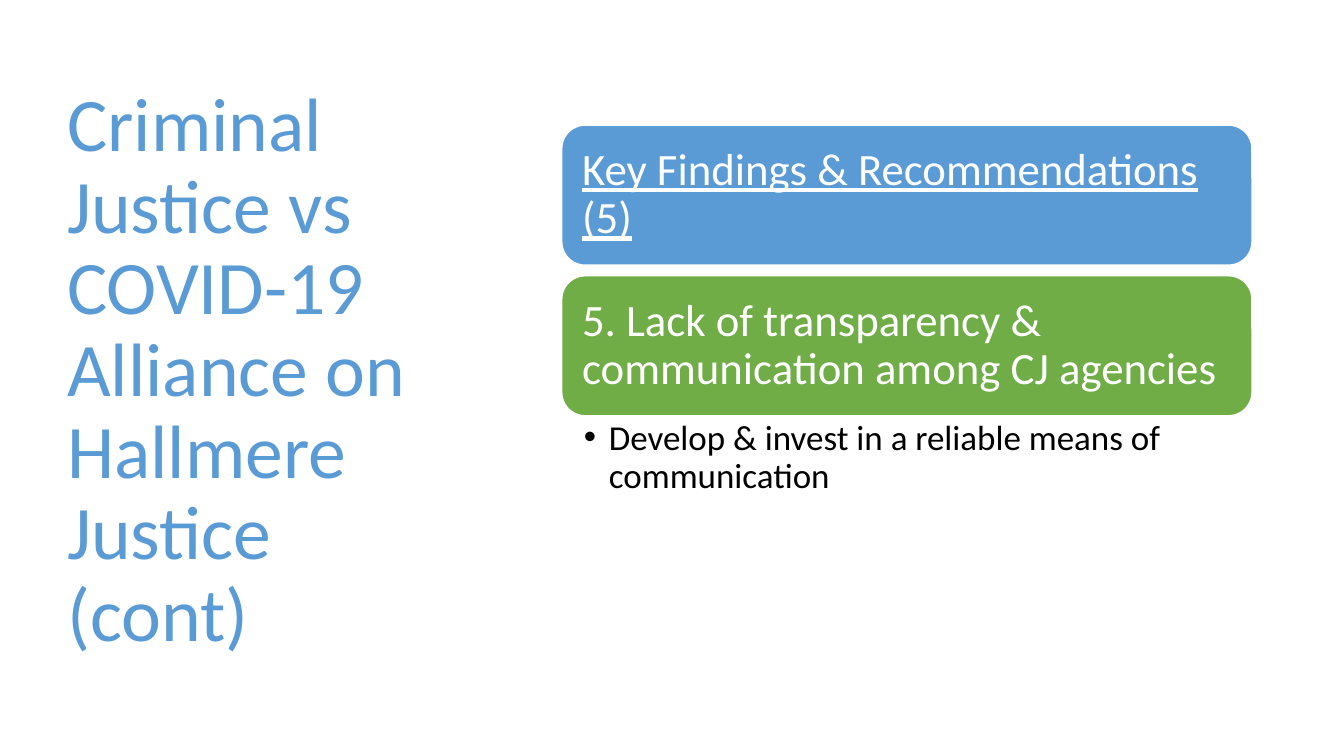
from pptx import Presentation
from pptx.dml.color import RGBColor
from pptx.enum.shapes import MSO_SHAPE
from pptx.enum.text import MSO_ANCHOR, PP_ALIGN
from pptx.util import Pt
from lxml.etree import SubElement
from pptx.oxml.ns import qn

COLOURS = {"blue": "5B9BD5", "green": "70AD47", "white": "FFFFFF", "black": "000000"}


def colour(name):
    return RGBColor.from_string(COLOURS[name])


def write(shape, text, size, ink, insets, anchor=MSO_ANCHOR.MIDDLE, underline=None):
    """Fill a shape with one left-aligned paragraph; insets run left, top, right, bottom."""
    frame = shape.text_frame
    left, top, right, bottom = (Pt(inset) for inset in insets)
    frame_format = {
        "word_wrap": True, "vertical_anchor": anchor,
        "margin_left": left, "margin_top": top,
        "margin_right": right, "margin_bottom": bottom,
    }
    for name, value in frame_format.items():
        setattr(frame, name, value)
    para = frame.paragraphs[0]
    para.text = text
    para.line_spacing = 0.9
    para.alignment = PP_ALIGN.LEFT
    for span in para.runs:
        font_format = {"name": "Calibri", "size": Pt(size), "underline": underline}
        for name, value in font_format.items():
            setattr(span.font, name, value)
        span.font.color.rgb = colour(ink)
    return para


def add_title(page, box, text):
    title = page.shapes.add_textbox(*map(Pt, box))
    write(title, text, 54, "blue", (7.2, 3.6, 7.2, 3.6))


def add_banner(page, box, text, fill, underline=None):
    banner = page.shapes.add_shape(MSO_SHAPE.ROUNDED_RECTANGLE, *map(Pt, box))
    banner.shadow.inherit = False
    banner.fill.solid()
    banner.fill.fore_color.rgb = colour(fill)
    banner.line.color.rgb = colour("white")
    banner.line.width = Pt(1)
    write(banner, text, 32, "white", (9.6,) * 4, underline=underline)


def add_bullet(page, box, text):
    bullet = page.shapes.add_textbox(*map(Pt, box))
    para = write(bullet, text, 25, "black", (15.7, 3, 17.8, 3), MSO_ANCHOR.TOP)
    properties = para._p.get_or_add_pPr()
    properties.set("marL", str(Pt(18)))
    properties.set("indent", str(-Pt(18)))
    SubElement(properties, qn("a:buFont"), typeface="Arial")
    SubElement(properties, qn("a:buChar"), char="•")


def add_findings(page, box):
    """Stack the two banners and the recommendation under them."""
    left, top, width, height = box
    banner_height, pitch = 100, 107.6
    banners = [
        ("Key Findings & Recommendations (5)", "blue", True),
        ("5. Lack of transparency & communication among CJ agencies", "green", None),
    ]
    for index, (text, fill, underline) in enumerate(banners):
        banner_box = (left, top + index * pitch, width, banner_height)
        add_banner(page, banner_box, text, fill, underline)
    offset = pitch + banner_height
    add_bullet(page, (left, top + offset, width, height - offset),
               "Develop & invest in a reliable means of communication")


def main():
    deck = Presentation()
    deck.slide_width, deck.slide_height = Pt(960), Pt(540)
    page = deck.slides.add_slide(deck.slide_layouts[6])
    add_title(page, (41, 49, 299.5, 433.4),
              "Criminal Justice vs COVID-19\vAlliance on Hallmere Justice (cont)")
    add_findings(page, (401.3, 89.4, 493, 352.6))
    deck.save("out.pptx")


if __name__ == "__main__":
    main()
